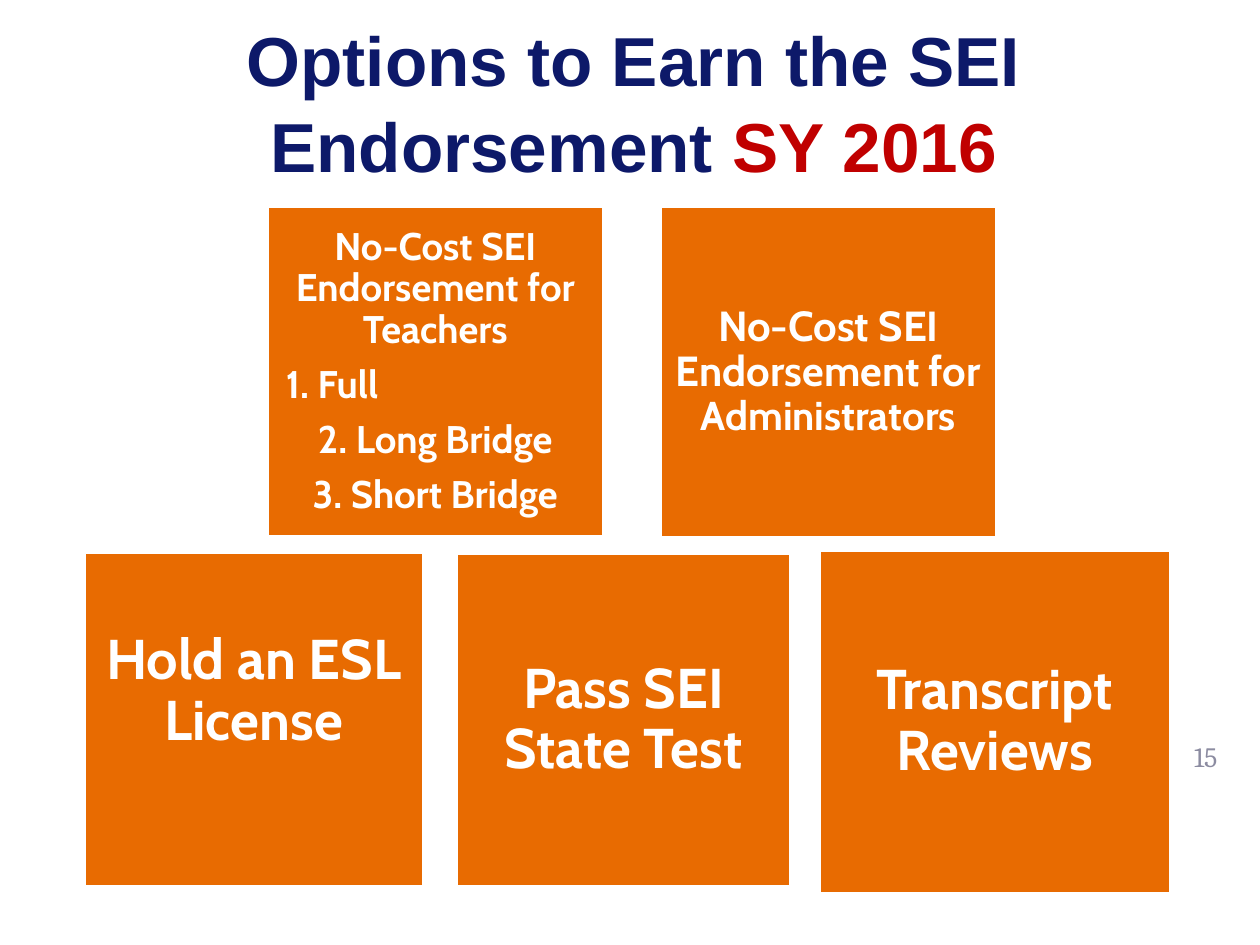
"""Build the slide on options to earn the SEI endorsement."""
import pptx
import pptx.util
import pptx.dml.color
import pptx.enum.text
import pptx.enum.shapes

Inches = pptx.util.Inches
Pt = pptx.util.Pt
Align = pptx.enum.text.PP_ALIGN
Anchor = pptx.enum.text.MSO_ANCHOR

hues = {"navy": "0D1969", "red": "C00000", "gray": "8C8CA1",
        "tile": "E86B01", "white": "FFFFFF"}


def color(name):
    return pptx.dml.color.RGBColor.from_string(hues[name])


def write(par, parts, face, bold=True):
    par.alignment = Align.CENTER
    for text, size, hue in parts:
        run = par.add_run()
        run.text = text
        run.font.name = face
        run.font.size = Pt(size)
        run.font.bold = bold
        run.font.color.rgb = color(hue)


deck = pptx.Presentation()
deck.slide_width = Inches(10)
deck.slide_height = Inches(7.5)
slide = deck.slides.add_slide(deck.slide_layouts[6])

labels = [
    ((0.33, 0.17, 9.4, 1.25), "Arial", True,
     [("Options to Earn the SEI Endorsement ", 39.6, "navy"),
      ("SY 2016", 39.6, "red")]),
    ((9.28, 5.75, 0.58, 0.5), "Cambria", False, [("15", 16, "gray")]),
]
for area, face, bold, parts in labels:
    box = slide.shapes.add_textbox(*map(Inches, area))
    frame = box.text_frame
    frame.word_wrap = True
    frame.vertical_anchor = Anchor.MIDDLE
    write(frame.paragraphs[0], parts, face, bold)
    frame.paragraphs[0].line_spacing = 1.04

tiles = [
    ((2.12, 1.64, 2.67, 2.62), 0.09, 0.09,
     [[("No-Cost SEI Endorsement for Teachers", 22)], [("1. Full", 22)],
      [("2. Long Bridge", 22)], [("3. Short Bridge", 22)]]),
    ((5.24, 1.64, 2.67, 2.63), 0.1, 0.1,
     [[("No-Cost SEI Endorsement for ", 24), ("Administrators", 23)]]),
    ((6.5, 4.37, 2.79, 2.72), 0.13, 0.13, [[("Transcript Reviews", 32)]]),
    ((0.67, 4.38, 2.69, 2.66), 0.13, 0.57, [[("Hold an ESL License", 32)]]),
    ((3.62, 4.39, 2.66, 2.65), 0.13, 0.13, [[("Pass SEI State Test", 32)]]),
]
for area, inset, base, lines in tiles:
    tile = slide.shapes.add_shape(
        pptx.enum.shapes.MSO_SHAPE.RECTANGLE, *map(Inches, area))
    tile.shadow.inherit = False
    tile.fill.solid()
    tile.fill.fore_color.rgb = color("tile")
    tile.line.color.rgb = color("white")
    tile.line.width = Pt(2)
    frame = tile.text_frame
    frame.word_wrap = True
    frame.vertical_anchor = Anchor.MIDDLE
    frame.margin_left = frame.margin_right = frame.margin_top = Inches(inset)
    frame.margin_bottom = Inches(base)
    for rank, parts in enumerate(lines):
        par = frame.add_paragraph() if rank else frame.paragraphs[0]
        write(par, [(text, size, "white") for text, size in parts], "Cabin")
        par.line_spacing = 0.9
        par.space_before = Pt(7.7 if rank else 0)
        if par.text == "1. Full":
            par.alignment = Align.LEFT
            par._p.get_or_add_pPr().set("marL", str(Inches(0.06)))

deck.save("out.pptx")
